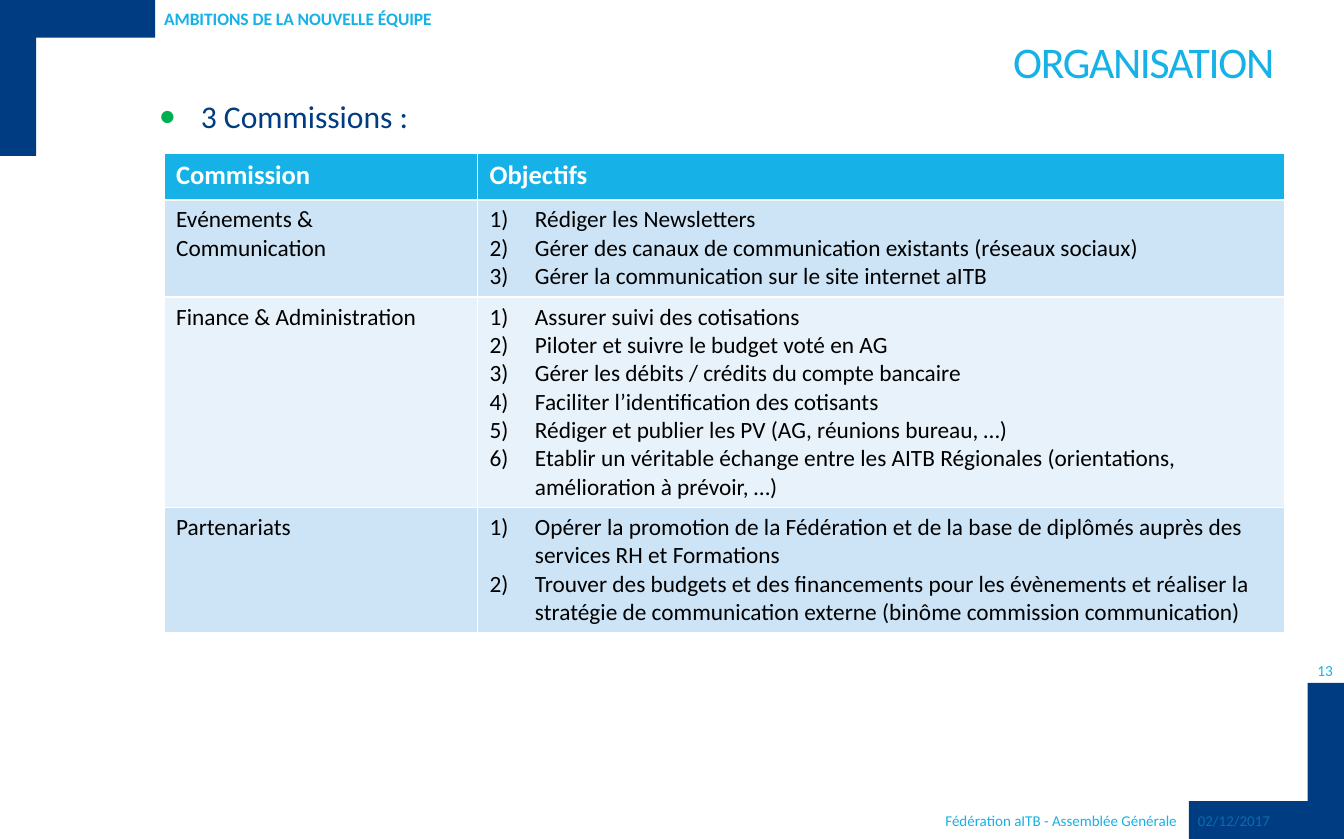
from dataclasses import dataclass

from lxml.etree import SubElement
from pptx import Presentation
from pptx.dml.color import RGBColor
from pptx.enum.shapes import MSO_SHAPE
from pptx.enum.text import MSO_ANCHOR, MSO_AUTO_SIZE, PP_ALIGN
from pptx.oxml.ns import qn
from pptx.util import Cm, Pt

COLORS = {
    "navy": "003C82",
    "sky": "16B1E6",
    "date": "0A6CAF",
    "green": "00B050",
    "band": "CCE4F5",
    "pale": "E8F2FA",
    "white": "FFFFFF",
    "black": "000000",
}
FONT = "Calibri"


@dataclass(frozen=True)
class Area:
    left: float
    top: float
    width: float
    height: float

    def lengths(self) -> tuple:
        """Return the four sides as lengths."""
        return Cm(self.left), Cm(self.top), Cm(self.width), Cm(self.height)


@dataclass(frozen=True)
class Style:
    size: float
    color: str
    bold: bool = False
    align: PP_ALIGN = PP_ALIGN.LEFT


@dataclass(frozen=True)
class Label:
    text: str
    area: Area
    style: Style
    margins: tuple = (0.25, 0.13, 0.25, 0.13)
    anchor: MSO_ANCHOR = MSO_ANCHOR.TOP


@dataclass(frozen=True)
class Commission:
    name: str
    height: float
    fill: str
    goals: tuple


BARS = (
    Area(25.21, 17, 3.29, 0.8),
    Area(27.73, 14.49, 0.77, 3.31),
    Area(0, 0, 3.29, 0.8),
    Area(0, 0, 0.77, 3.31),
)
TITLE = Label("ORGANISATION", Area(1.93, 0.87, 25.32, 2.13),
              Style(26.3, "sky", align=PP_ALIGN.RIGHT), (0.5, 0.13, 0.23, 0))
BODY = Label("3 Commissions :", Area(3.12, 1.93, 24.13, 14.58), Style(19, "navy"))
SECTION = Label("AMBITIONS DE LA NOUVELLE ÉQUIPE", Area(3.48, 0.07, 9.93, 0.66),
                Style(10.5, "sky", True), (0, 0.13, 0.25, 0.13), MSO_ANCHOR.MIDDLE)
FOOTERS = (
    Label("Fédération aITB - Assemblée Générale", Area(5.85, 17.08, 19.35, 0.58),
          Style(9, "sky", align=PP_ALIGN.RIGHT)),
    Label("02/12/2017", Area(25.15, 17.08, 3.33, 0.58), Style(9, "date")),
    Label("13", Area(27.72, 13.94, 0.76, 0.56),
          Style(9.2, "sky", align=PP_ALIGN.CENTER), (0, 0, 0, 0), MSO_ANCHOR.MIDDLE),
)
COLUMNS = (6.65, 17.12)
HEADER_HEIGHT = 0.99
HEADINGS = ("Commission", "Objectifs")
HEADING_STYLE = Style(16, "white", True)
CELL_STYLE = Style(14, "black")
COMMISSIONS = (
    Commission("Evénements & Communication", 2.06, "band", (
        "Rédiger les Newsletters",
        "Gérer des canaux de communication existants (réseaux sociaux)",
        "Gérer la communication sur le site internet aITB",
    )),
    Commission("Finance & Administration", 4.45, "pale", (
        "Assurer suivi des cotisations",
        "Piloter et suivre le budget voté en AG",
        "Gérer les débits / crédits du compte bancaire",
        "Faciliter l’identification des cotisants",
        "Rédiger et publier les PV (AG, réunions bureau, …)",
        "Etablir un véritable échange entre les AITB Régionales "
        "(orientations, amélioration à prévoir, …)",
    )),
    Commission("Partenariats", 2.64, "band", (
        "Opérer la promotion de la Fédération et de la base de diplômés "
        "auprès des services RH et Formations",
        "Trouver des budgets et des financements pour les évènements et réaliser "
        "la stratégie de communication externe (binôme commission communication)",
    )),
)


def rgb(name: str) -> RGBColor:
    """Return the named colour."""
    return RGBColor.from_string(COLORS[name])


def start_list(para, indent: float):
    """Give a paragraph a hanging indent and return its properties."""
    properties = para._p.get_or_add_pPr()
    properties.set("marL", str(Cm(indent)))
    properties.set("indent", str(-Cm(indent)))
    return properties


def write(para, text: str, style: Style):
    """Add one styled run to a paragraph and return it."""
    para.alignment = style.align
    para.space_before = Pt(0)
    span = para.add_run()
    span.text = text
    span.font.name = FONT
    span.font.size = Pt(style.size)
    span.font.bold = style.bold
    span.font.color.rgb = rgb(style.color)
    return span


def fill_label(box, label: Label):
    """Place a text shape, write its label and return the run."""
    box.left, box.top, box.width, box.height = label.area.lengths()
    frame = box.text_frame
    frame.word_wrap = True
    frame.auto_size = MSO_AUTO_SIZE.NONE
    frame.vertical_anchor = label.anchor
    (frame.margin_left, frame.margin_top,
     frame.margin_right, frame.margin_bottom) = map(Cm, label.margins)
    return write(frame.paragraphs[0], label.text, label.style)


def draw_bar(page, area: Area) -> None:
    """Draw one navy corner bar."""
    bar = page.shapes.add_shape(MSO_SHAPE.RECTANGLE, *area.lengths())
    bar.shadow.inherit = False
    bar.fill.solid()
    bar.fill.fore_color.rgb = rgb("navy")
    bar.line.fill.background()


def write_cell(cell, fill: str, style: Style, texts: tuple, numbered: bool = False) -> None:
    """Fill a cell and write its paragraphs, numbered if asked."""
    cell.fill.solid()
    cell.fill.fore_color.rgb = rgb(fill)
    frame = cell.text_frame
    for index, text in enumerate(texts):
        para = frame.add_paragraph() if index else frame.paragraphs[0]
        write(para, text, style)
        if numbered:
            SubElement(start_list(para, 0.96), qn("a:buAutoNum"), type="arabicParenR")


def draw_table(page) -> None:
    """Draw the table of commissions and their goals."""
    heights = (HEADER_HEIGHT, *(item.height for item in COMMISSIONS))
    area = Area(3.48, 3.25, sum(COLUMNS), sum(heights))
    table = page.shapes.add_table(len(heights), len(COLUMNS), *area.lengths()).table
    for column, width in zip(table.columns, COLUMNS):
        column.width = Cm(width)
    for row, height in zip(table.rows, heights):
        row.height = Cm(height)
    for cell, heading in zip(table.rows[0].cells, HEADINGS):
        write_cell(cell, "sky", HEADING_STYLE, (heading,))
    for index, item in enumerate(COMMISSIONS, start=1):
        write_cell(table.cell(index, 0), item.fill, CELL_STYLE, (item.name,))
        write_cell(table.cell(index, 1), item.fill, CELL_STYLE, item.goals, True)


def main() -> None:
    """Build and save the slide."""
    deck = Presentation()
    deck.slide_width, deck.slide_height = Cm(28.5), Cm(17.8)
    page = deck.slides.add_slide(deck.slide_layouts[3])
    for area in BARS:
        draw_bar(page, area)
    title, body, section = page.placeholders
    fill_label(title, TITLE).font._element.set("spc", "-80")
    title.text_frame.paragraphs[0].line_spacing = Pt(24)
    fill_label(body, BODY)
    bullet = start_list(body.text_frame.paragraphs[0], 0.89)
    color = SubElement(bullet, qn("a:buClr"))
    SubElement(color, qn("a:srgbClr"), val=COLORS["green"])
    SubElement(bullet, qn("a:buSzPct"), val="90000")
    SubElement(bullet, qn("a:buChar"), char="●")
    fill_label(section, SECTION)
    SubElement(start_list(section.text_frame.paragraphs[0], 0), qn("a:buNone"))
    for label in FOOTERS:
        fill_label(page.shapes.add_textbox(*label.area.lengths()), label)
    draw_table(page)
    deck.save("out.pptx")


if __name__ == "__main__":
    main()
